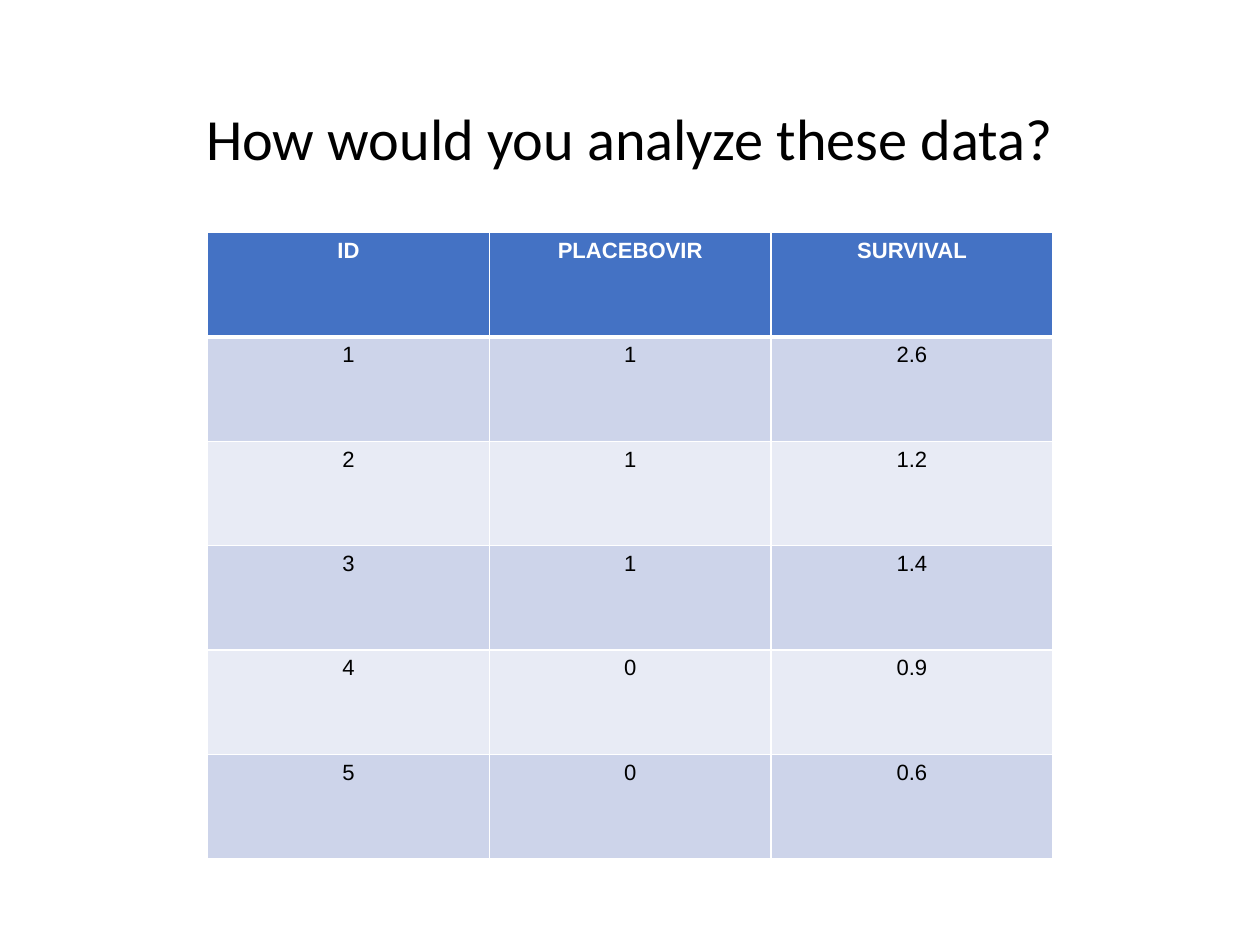
from dataclasses import dataclass

from lxml import etree
from pptx import Presentation
from pptx.dml.color import RGBColor
from pptx.enum.text import MSO_ANCHOR, MSO_AUTO_SIZE, PP_ALIGN
from pptx.oxml.ns import qn
from pptx.util import Cm, Pt

CENTER = PP_ALIGN.CENTER
MIDDLE = MSO_ANCHOR.MIDDLE
NO_FIT = MSO_AUTO_SIZE.NONE
TITLE_ONLY = 5


@dataclass(frozen=True)
class Theme:
    ink: str = "000000"
    white: str = "FFFFFF"
    head: str = "4472C4"
    bands: tuple = ("CDD4EA", "E8EBF5")
    title_font: str = "Calibri"
    cell_font: str = "Arial"
    title_size: int = 37
    cell_size: int = 14
    thin: int = 1
    thick: int = 3


THEME = Theme()

ROWS = (
    ("ID", "PLACEBOVIR", "SURVIVAL"),
    ("1", "1", "2.6"),
    ("2", "1", "1.2"),
    ("3", "1", "1.4"),
    ("4", "0", "0.9"),
    ("5", "0", "0.6"),
)


def set_font(para, name, size, color, bold=False):
    para.alignment = CENTER
    font = para.font
    font.name, font.size, font.bold = name, Pt(size), bold
    font.color.rgb = RGBColor.from_string(color)


def add_title(slide, text):
    title = slide.shapes.title
    title.left, title.top = Cm(1.93), Cm(1.12)
    title.width, title.height = Cm(24.33), Cm(4.09)
    frame = title.text_frame
    frame.text = text
    frame.word_wrap = True
    frame.auto_size = NO_FIT
    frame.vertical_anchor = MIDDLE
    frame.margin_left = frame.margin_right = Cm(0.28)
    frame.margin_top = frame.margin_bottom = Cm(0.28)
    para = frame.paragraphs[0]
    para.line_spacing = 0.9
    set_font(para, THEME.title_font, THEME.title_size, THEME.ink)


def set_border(cell, side, width):
    """Draw one side (L, R, T or B) of a cell in white."""
    props = cell._tc.get_or_add_tcPr()
    line = etree.SubElement(props, qn(f"a:ln{side}"), w=str(Pt(width)))
    fill = etree.SubElement(line, qn("a:solidFill"))
    etree.SubElement(fill, qn("a:srgbClr"), val=THEME.white)


def style_cell(cell, row):
    head = row == 0
    edges = {
        "L": THEME.thin,
        "R": THEME.thin,
        "T": THEME.thick if row == 1 else THEME.thin,
        "B": THEME.thick if head else THEME.thin,
    }
    for side, width in edges.items():
        set_border(cell, side, width)
    color = THEME.head if head else THEME.bands[(row - 1) % 2]
    cell.fill.solid()
    cell.fill.fore_color.rgb = RGBColor.from_string(color)
    cell.margin_left = cell.margin_right = Cm(0.25)
    cell.margin_top = cell.margin_bottom = Cm(0.13)
    para = cell.text_frame.paragraphs[0]
    ink = THEME.white if head else THEME.ink
    set_font(para, THEME.cell_font, THEME.cell_size, ink, head)


def add_grid(slide, rows):
    frame = slide.shapes.add_table(
        len(rows), len(rows[0]), Cm(4.65), Cm(5.21), Cm(18.93), Cm(14.02)
    )
    for i, row in enumerate(rows):
        for j, text in enumerate(row):
            cell = frame.table.cell(i, j)
            cell.text = text
            style_cell(cell, i)


def main():
    deck = Presentation()
    deck.slide_width, deck.slide_height = Cm(28.22), Cm(21.16)
    slide = deck.slides.add_slide(deck.slide_layouts[TITLE_ONLY])
    add_title(slide, "How would you analyze these data?")
    add_grid(slide, ROWS)
    deck.save("out.pptx")


if __name__ == "__main__":
    main()
